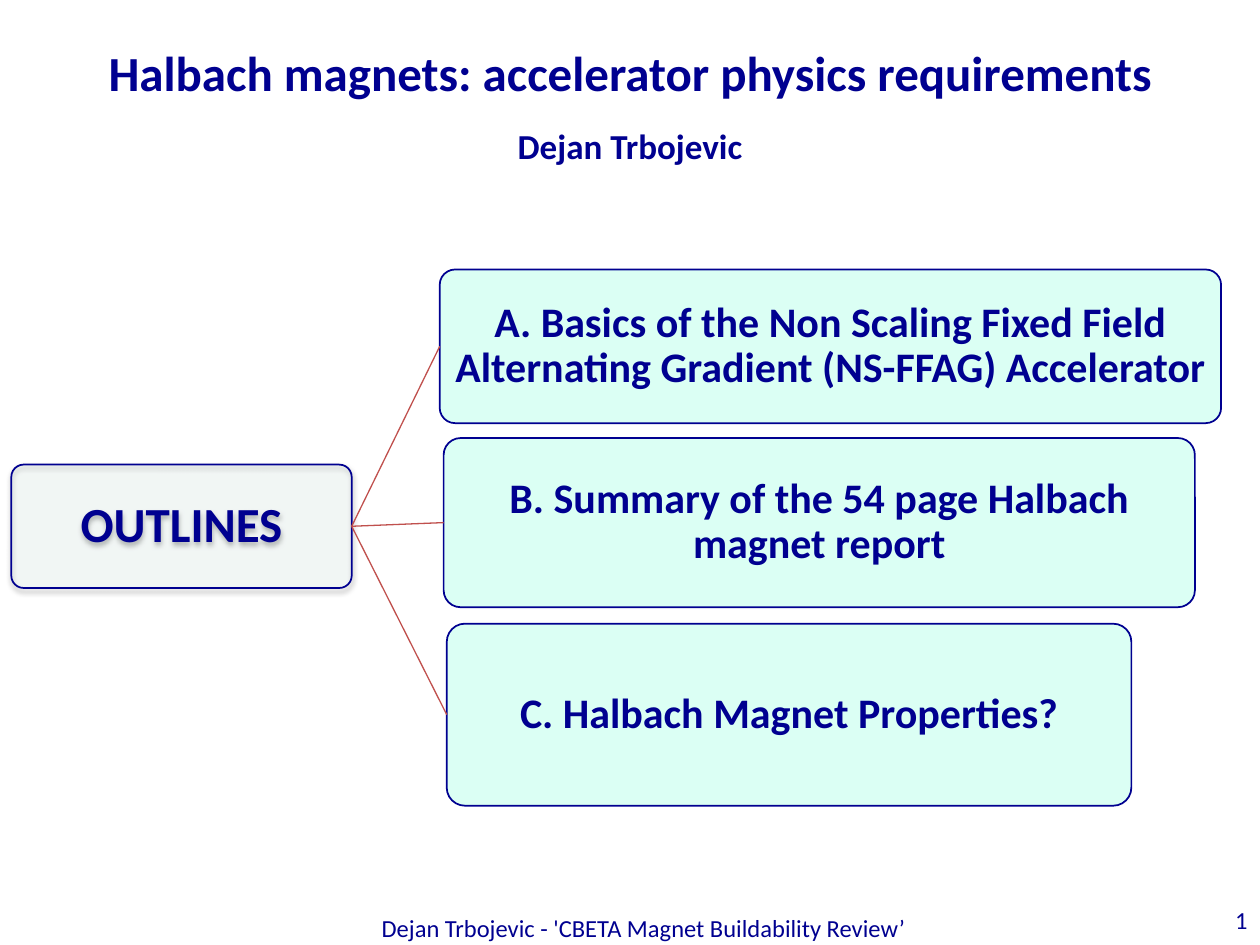
"""Builds the outline slide of a talk on Halbach magnets."""
from lxml import etree
from pptx import Presentation
from pptx.dml.color import RGBColor
from pptx.enum.shapes import MSO_CONNECTOR, MSO_SHAPE
from pptx.enum.text import MSO_ANCHOR, MSO_AUTO_SIZE, PP_ALIGN
from pptx.oxml import parse_xml
from pptx.oxml.ns import nsdecls, qn
from pptx.util import Pt

ROUNDED = MSO_SHAPE.ROUNDED_RECTANGLE
STRAIGHT = MSO_CONNECTOR.STRAIGHT
TOP, MIDDLE = MSO_ANCHOR.TOP, MSO_ANCHOR.MIDDLE
CENTER, RIGHT = PP_ALIGN.CENTER, PP_ALIGN.RIGHT
COLORS = {"navy": "000090", "mint": "DBFFF4", "red": "C0504D"}


def format_text(frame, sizes, align, anchor, bold):
    frame.word_wrap = True
    frame.auto_size = MSO_AUTO_SIZE.NONE
    frame.vertical_anchor = anchor
    for para, size in zip(frame.paragraphs, sizes):
        para.alignment = align
        for span in para.runs:
            span.font.name = "Calibri"
            span.font.size = Pt(size)
            span.font.bold = bold
            span.font.color.rgb = RGBColor.from_string(COLORS["navy"])


def add_box(page, text, left, top, width, height, size):
    box = page.shapes.add_shape(ROUNDED, Pt(left), Pt(top), Pt(width), Pt(height))
    box.adjustments[0] = 0.1
    box.shadow.inherit = False
    box.fill.solid()
    box.fill.fore_color.rgb = RGBColor.from_string(COLORS["mint"])
    box.line.color.rgb = RGBColor.from_string(COLORS["navy"])
    box.line.width = Pt(1)
    frame = box.text_frame
    frame.text = text
    frame.margin_left = frame.margin_right = Pt(4)
    frame.margin_top = frame.margin_bottom = Pt(4)
    frame.paragraphs[0].line_spacing = 0.9
    format_text(frame, [size], CENTER, MIDDLE, True)
    return box


deck = Presentation()
deck.slide_width, deck.slide_height = Pt(720), Pt(540)
page = deck.slides.add_slide(deck.slide_layouts[5])

title = page.shapes.title
title.left, title.top, title.width, title.height = Pt(0), Pt(0), Pt(720), Pt(100)
frame = title.text_frame
frame.text = "Halbach magnets: accelerator physics requirements\nDejan Trbojevic"
frame.margin_top = Pt(24.5)
frame.paragraphs[0].space_before = Pt(0)
frame.paragraphs[1].space_before = Pt(13)
format_text(frame, [28, 20], CENTER, TOP, True)

outline = add_box(page, "OUTLINES", 6.5, 265.5, 194.5, 70.5, 28)
fill_color = outline.fill._xPr.find(qn("a:solidFill"))[0]
etree.SubElement(fill_color, qn("a:alpha"), val="12000")
effects = outline.fill._xPr.find(qn("a:effectLst"))
effects.append(parse_xml(
    f'<a:outerShdw {nsdecls("a")} blurRad="39370" dist="22860" dir="5400000" rotWithShape="0">'
    '<a:srgbClr val="000000"><a:alpha val="35000"/></a:srgbClr></a:outerShdw>'))

topics = [
    ("A. Basics of the Non Scaling Fixed Field Alternating Gradient (NS-FFAG) Accelerator",
     251.3, 154, 446.5, 87.8),
    ("B. Summary of the 54 page Halbach magnet report", 253.5, 250.3, 429.3, 96.7),
    ("C. Halbach Magnet Properties?", 255.3, 356.4, 391.2, 104),
]
for text, left, top, width, height in topics:
    topic = add_box(page, text, left, top, width, height, 24)
    branch = page.shapes.add_connector(STRAIGHT, 0, 0, 0, 0)
    branch.begin_connect(outline, 3)
    branch.end_connect(topic, 1)
    branch.line.color.rgb = RGBColor.from_string(COLORS["red"])
    branch.line.width = Pt(0.75)
    etree.SubElement(branch.line._get_or_add_ln().getparent(), qn("a:effectLst"))

notes = [
    ("Dejan Trbojevic - 'CBETA Magnet Buildability Review’", 150, 518.4, 435.6, 21.6, CENTER, TOP),
    ("1", 665.3, 511.2, 54.7, 28.8, RIGHT, MIDDLE),
]
for text, left, top, width, height, align, anchor in notes:
    box = page.shapes.add_textbox(Pt(left), Pt(top), Pt(width), Pt(height))
    box.text_frame.text = text
    format_text(box.text_frame, [14], align, anchor, False)

deck.save("out.pptx")
